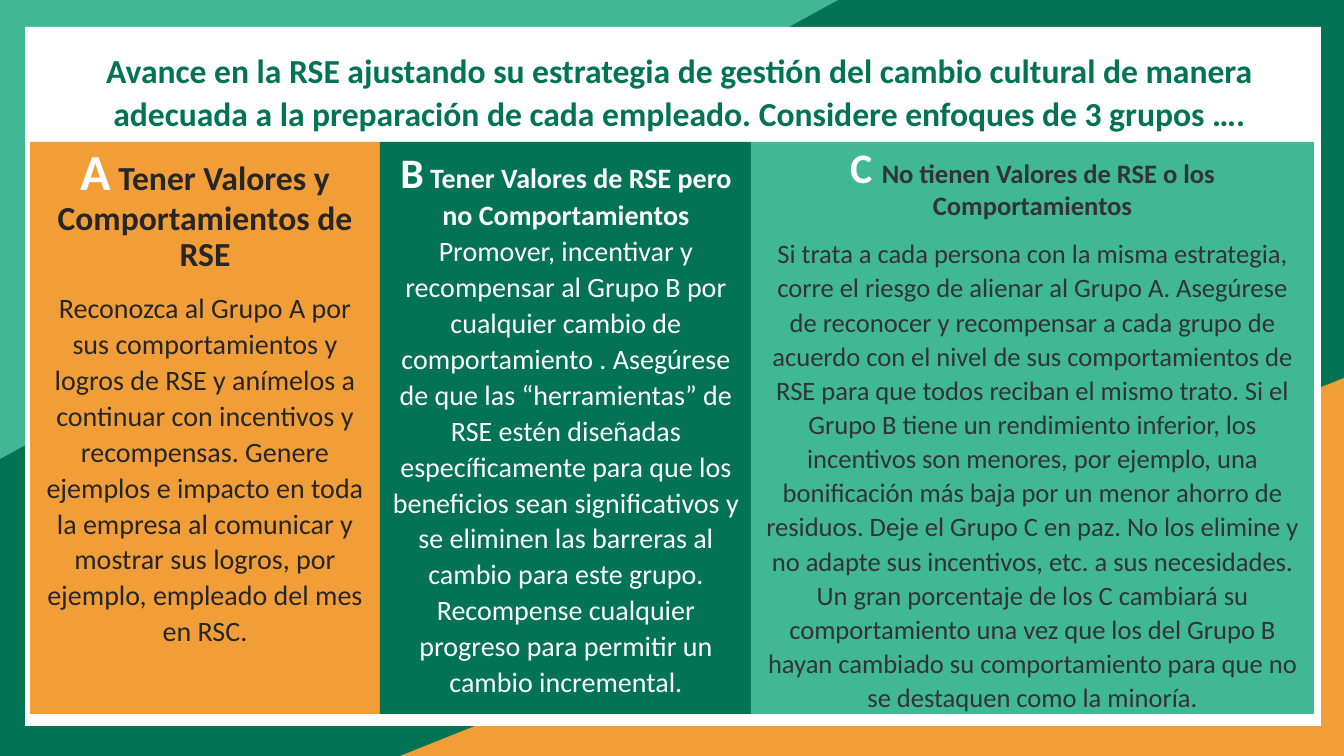
import pptx
import pptx.util
import pptx.dml.color
import pptx.enum.shapes
import pptx.enum.text

PX = 914400 / 100.8
COLORS = {"green": "027354", "mint": "40B894", "orange": "F29E38",
          "white": "FFFFFF", "ink": "262626", "gray": "333333"}
SHAPES = pptx.enum.shapes.MSO_SHAPE


def add_block(kind, box, color):
    shape = slide.shapes.add_shape(kind, *[round(value * PX) for value in box])
    shape.shadow.inherit = False
    shape.fill.solid()
    shape.fill.fore_color.rgb = pptx.dml.color.RGBColor.from_string(COLORS[color])
    shape.line.fill.background()
    return shape


def write_text(shape, paragraphs):
    frame = shape.text_frame
    frame_format = {"word_wrap": True,
                    "auto_size": pptx.enum.text.MSO_AUTO_SIZE.NONE,
                    "vertical_anchor": pptx.enum.text.MSO_ANCHOR.TOP}
    for name, value in frame_format.items():
        setattr(frame, name, value)
    for index, (spacing, before, after, runs) in enumerate(paragraphs):
        paragraph = frame.add_paragraph() if index else frame.paragraphs[0]
        paragraph_format = {"alignment": pptx.enum.text.PP_ALIGN.CENTER,
                            "line_spacing": spacing,
                            "space_before": pptx.util.Pt(before),
                            "space_after": pptx.util.Pt(after)}
        for name, value in paragraph_format.items():
            setattr(paragraph, name, value)
        for text, size, color, bold in runs:
            run = paragraph.add_run()
            run.text = text
            run_format = {"name": "Calibri", "size": pptx.util.Pt(size), "bold": bold}
            for name, value in run_format.items():
                setattr(run.font, name, value)
            run.font.color.rgb = pptx.dml.color.RGBColor.from_string(COLORS[color])


presentation = pptx.Presentation()
presentation.slide_width = round(1344 * PX)
presentation.slide_height = round(756 * PX)
slide = presentation.slides.add_slide(presentation.slide_layouts[5])

add_block(SHAPES.RECTANGLE, (0, 0, 1344, 756), "green")
orange_corner = add_block(SHAPES.ISOSCELES_TRIANGLE, (400, 378, 944, 378), "orange")
mint_corner = add_block(SHAPES.ISOSCELES_TRIANGLE, (0, 0, 838, 459), "mint")
for corner in (orange_corner, mint_corner):
    corner.adjustments[0] = 1
mint_corner.rotation = 180
add_block(SHAPES.RECTANGLE, (25, 27, 1296, 699), "white")

title = slide.shapes.title
title.element.getparent().append(title.element)
for name, value in {"left": 45, "top": 42, "width": 1269, "height": 148}.items():
    setattr(title, name, round(value * PX))
write_text(title, [(1.07, 10, 8.7, [(
    "Avance en la RSE ajustando su estrategia de gestión del cambio cultural de manera "
    "adecuada a la preparación de cada empleado. Considere enfoques de 3 grupos ….",
    24, "green", True)])])

groups = [
    (30, 350, "orange", 0.9, 10,
     [("A", 36, "white", True), (" ", 24, "white", True),
      ("Tener Valores y Comportamientos de RSE", 24, "ink", True)],
     ("Reconozca al Grupo A por sus comportamientos y logros de RSE y anímelos a continuar "
      "con incentivos y recompensas. Genere ejemplos e impacto en toda la empresa al "
      "comunicar y mostrar sus logros, por ejemplo, empleado del mes en RSC.",
      20, "ink", False)),
    (380, 372, "green", 1.0, 0,
     [("B", 30, "white", True),
      (" Tener Valores de RSE pero no Comportamientos", 20, "white", True)],
     ("Promover, incentivar y recompensar al Grupo B por cualquier cambio de "
      "comportamiento . Asegúrese de que las “herramientas” de RSE estén diseñadas "
      "específicamente para que los beneficios sean significativos y se eliminen las "
      "barreras al cambio para este grupo. Recompense cualquier progreso para permitir "
      "un cambio incremental.",
      20, "white", False)),
    (751, 563, "mint", 0.9, 10,
     [("C ", 30, "white", True),
      ("No tienen Valores de RSE o los Comportamientos", 19, "gray", True)],
     ("Si trata a cada persona con la misma estrategia, corre el riesgo de alienar al "
      "Grupo A. Asegúrese de reconocer y recompensar a cada grupo de acuerdo con el nivel "
      "de sus comportamientos de RSE para que todos reciban el mismo trato. Si el Grupo B "
      "tiene un rendimiento inferior, los incentivos son menores, por ejemplo, una "
      "bonificación más baja por un menor ahorro de residuos. Deje el Grupo C en paz. No "
      "los elimine y no adapte sus incentivos, etc. a sus necesidades. Un gran porcentaje "
      "de los C cambiará su comportamiento una vez que los del Grupo B hayan cambiado su "
      "comportamiento para que no se destaquen como la minoría.",
      19, "gray", False)),
]
for left, width, color, heading_spacing, before, heading, body in groups:
    column = add_block(SHAPES.RECTANGLE, (left, 142, width, 572), color)
    write_text(column, [(heading_spacing, before, 0, heading),
                        (1.07, before, 8.7, [body])])

presentation.save("out.pptx")
